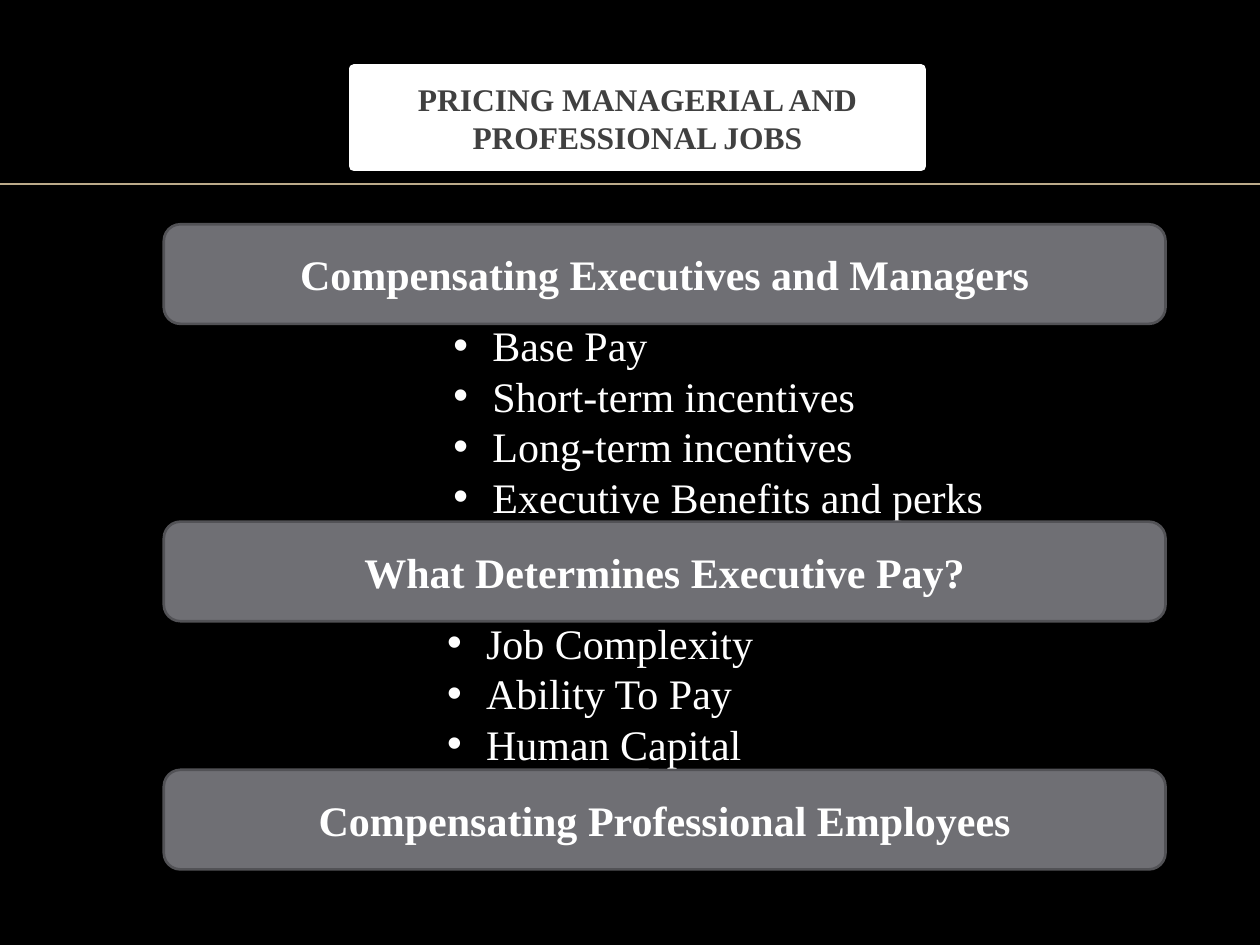
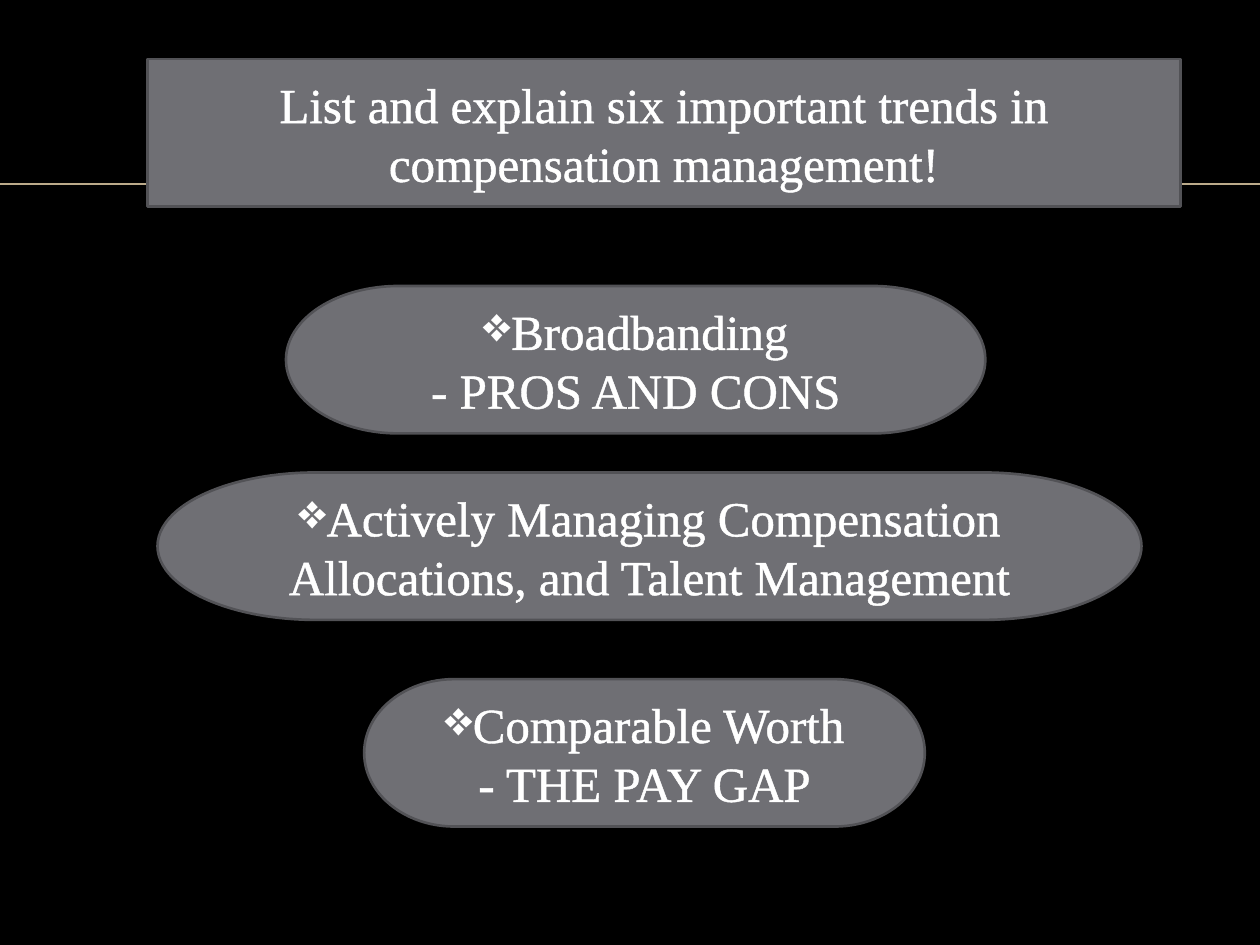
from lxml import etree
from pptx import Presentation
from pptx.dml.color import RGBColor
from pptx.enum.shapes import MSO_CONNECTOR, MSO_SHAPE as SHAPE
from pptx.enum.text import MSO_ANCHOR, PP_ALIGN
from pptx.oxml.ns import qn
from pptx.util import Inches, Pt

BLACK = RGBColor(0x00, 0x00, 0x00)
WHITE = RGBColor(0xFF, 0xFF, 0xFF)
CHARCOAL = RGBColor(0x40, 0x40, 0x40)
GREY = RGBColor(0x6F, 0x6F, 0x74)
DARK_GREY = RGBColor(0x52, 0x52, 0x56)
TAN = RGBColor(0xBB, 0xAA, 0x8A)
FONT = "Times New Roman"


def add_box(s, kind, box, text, size, bold=False, color=WHITE,
            fill=GREY, edge=DARK_GREY, edge_width=1.5, outlined=False):
    sp = s.shapes.add_shape(kind, *[Inches(v) for v in box])
    sp.shadow.inherit = False
    sp.fill.solid()
    sp.fill.fore_color.rgb = fill
    sp.line.color.rgb = edge
    sp.line.width = Pt(edge_width)
    tf = sp.text_frame
    tf.word_wrap = True
    tf.vertical_anchor = MSO_ANCHOR.MIDDLE
    tf.text = text
    for p in tf.paragraphs:
        p.alignment = PP_ALIGN.CENTER
        for r in p.runs:
            r.font.name = FONT
            r.font.size = Pt(size)
            r.font.bold = bold
            r.font.color.rgb = color
            if outlined:
                ln = etree.Element(qn("a:ln"), w=str(Pt(1.45)))
                solid = etree.SubElement(ln, qn("a:solidFill"))
                etree.SubElement(solid, qn("a:srgbClr"), val=str(WHITE))
                r.font._element.insert(0, ln)
    return sp


def add_bullet(p, char, indent=0):
    pPr = p._p.get_or_add_pPr()
    pPr.set("marL", str(Inches(indent)))
    pPr.set("indent", str(-Inches(indent)))
    if char == "•":
        etree.SubElement(pPr, qn("a:buFont"), typeface="Arial")
    etree.SubElement(pPr, qn("a:buChar"), char=char)


prs = Presentation()
prs.slide_width = Inches(10)
prs.slide_height = Inches(7.5)

slides = []
for _ in range(2):
    s = prs.slides.add_slide(prs.slide_layouts[6])
    s.background.fill.solid()
    s.background.fill.fore_color.rgb = BLACK
    rule = s.shapes.add_connector(MSO_CONNECTOR.STRAIGHT, 0, Inches(1.46),
                                  prs.slide_width, Inches(1.46))
    rule.line.color.rgb = TAN
    rule.line.width = Pt(1)
    etree.SubElement(rule._element.spPr, qn("a:effectLst"))
    slides.append(s)
jobs, trends = slides

title = add_box(jobs, SHAPE.RECTANGLE, (2.81, 0.55, 4.5, 0.77),
                "PRICING MANAGERIAL AND PROFESSIONAL JOBS", 18, bold=True,
                color=CHARCOAL, fill=WHITE, edge=WHITE, edge_width=6)
title.text_frame.paragraphs[0].space_before = Pt(4)

sections = [
    (1.78, "Compensating Executives and Managers", 3.5,
     ["Base Pay", "Short-term incentives", "Long-term incentives",
      "Executive Benefits and perks"]),
    (4.14, "What Determines Executive Pay?", 3.45,
     ["Job Complexity", "Ability To Pay", "Human Capital"]),
    (6.11, "Compensating Professional Employees", 0, []),
]
for top, heading, left, items in sections:
    add_box(jobs, SHAPE.ROUNDED_RECTANGLE, (1.3, top, 7.95, 0.79),
            heading, 24, bold=True)
    if not items:
        continue
    tb = jobs.shapes.add_textbox(Inches(left), Inches(top + 0.71), Inches(4.5),
                                 Inches(0.1 + 0.4 * len(items)))
    tf = tb.text_frame
    tf.word_wrap = True
    tf.text = "\n".join(items)
    for p in tf.paragraphs:
        add_bullet(p, "•", 0.31)
        for r in p.runs:
            r.font.name = FONT
            r.font.size = Pt(24)
            r.font.color.rgb = WHITE

add_box(trends, SHAPE.RECTANGLE, (1.17, 0.47, 8.2, 1.17),
        "List and explain six important trends in compensation management!",
        28, outlined=True)

topics = [
    (2.27, 2.27, 5.55, "Broadbanding\n- PROS AND CONS"),
    (1.25, 3.75, 7.81,
     "Actively Managing Compensation Allocations, and Talent Management"),
    (2.89, 5.39, 4.45, "Comparable Worth\n- THE PAY GAP"),
]
for left, top, width, text in topics:
    sp = add_box(trends, SHAPE.FLOWCHART_TERMINATOR, (left, top, width, 1.17),
                 text, 28, outlined=True)
    add_bullet(sp.text_frame.paragraphs[0], "❖")

prs.save("out.pptx")
